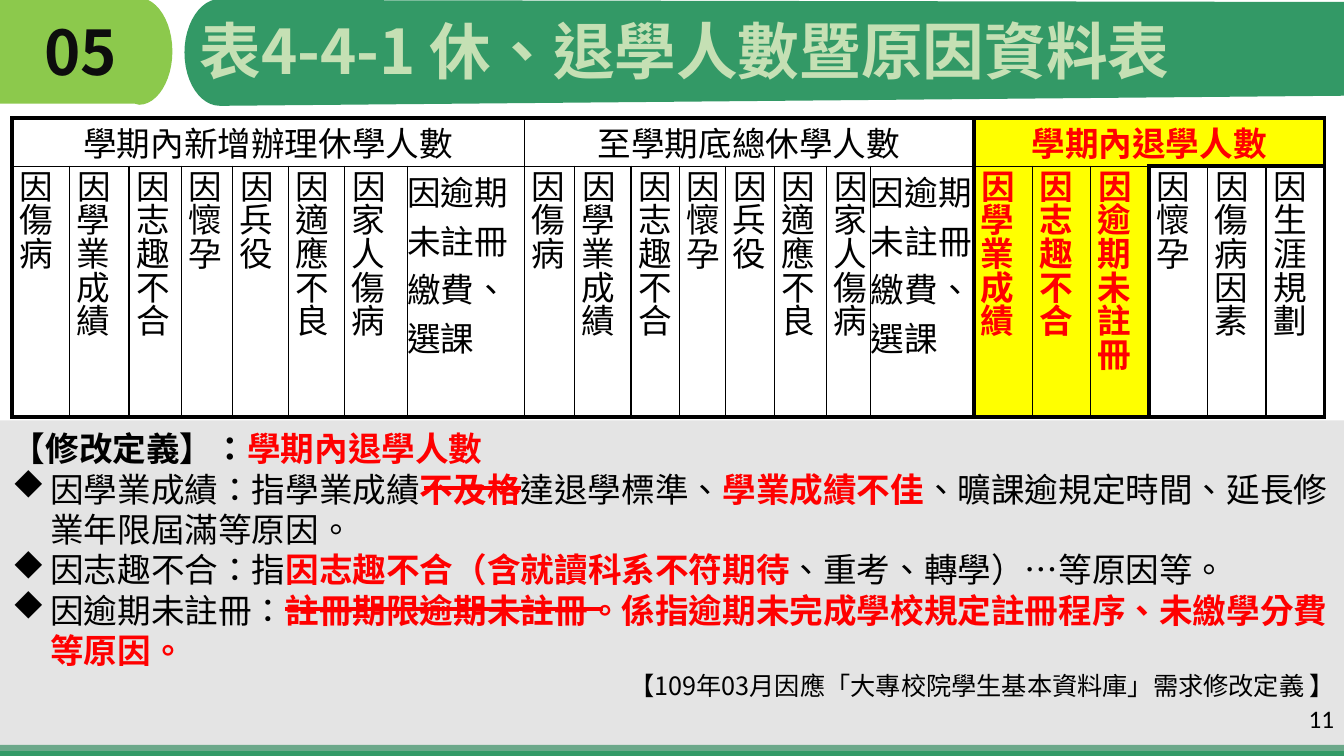
from lxml.etree import SubElement
from pptx import Presentation
from pptx.dml.color import RGBColor
from pptx.enum.shapes import MSO_CONNECTOR, MSO_SHAPE
from pptx.enum.text import MSO_ANCHOR, PP_ALIGN
from pptx.oxml.ns import qn
from pptx.util import Inches, Pt

LIME = RGBColor(0x8C, 0xC9, 0x4C)
GREEN = RGBColor(0x33, 0x99, 0x66)
PALE_GREEN = RGBColor(0xC5, 0xE0, 0xB4)
GRAY = RGBColor(0xBF, 0xBF, 0xBF)
DARK = RGBColor(0x0D, 0x0D, 0x0D)
BLACK = RGBColor(0, 0, 0)
RED = RGBColor(0xFF, 0, 0)
YELLOW = RGBColor(0xFF, 0xFF, 0)
CJK = "Noto Sans CJK SC"

COLUMN_WIDTHS = [0.57, 0.59, 0.52, 0.51, 0.55, 0.56, 0.62, 1.16,
                 0.5, 0.56, 0.48, 0.46, 0.48, 0.52, 0.44, 1.02] + [0.58] * 6
GROUPS = [("學期內新增辦理休學人數", 0, 7), ("至學期底總休學人數", 8, 15),
          ("學期內退學人數", 16, 21)]
OVERDUE = "因逾期未註冊\n繳費、選課"
LEAVE_REASONS = ["因傷病", "因學業成績", "因志趣不合", "因懷孕", "因兵役",
                 "因適應不良", "因家人傷病", OVERDUE]
DROPOUT_REASONS = ["因學業成績", "因志趣不合", "因逾期未註冊",
                   "因懷孕", "因傷病因素", "因生涯規劃"]
REVISED = range(16, 19)
THICK_EDGES = {0, 16, 19, 22}

# Each run is (text, is it highlighted)
DEFINITIONS = [
    [("因學業成績：指學業成績", False), ("不及格", True), ("達退學標準、", False),
     ("學業成績不佳", True), ("、曠課逾規定時間、延長修業年限屆滿等原因。", False)],
    [("因志趣不合：指", False), ("因志趣不合（含就讀科系不符期待", True),
     ("、重考、轉學）…等原因等。", False)],
    [("因逾期未註冊：", False),
     ("註冊期限逾期未註冊。係指逾期未完成學校規定註冊程序、未繳學分費等原因。", True)],
]


def add_run(p, text, size, color=BLACK, bold=False, font=CJK):
    r = p.add_run()
    r.text = text
    r.font.size, r.font.bold, r.font.name = Pt(size), bold, font
    r.font.color.rgb = color
    r.font._element.set("lang", "en-US")
    r.font._element.set("lang", "zh-TW")
    SubElement(r.font._element, qn("a:ea")).set("typeface", font)


def hang(p, length):
    p_pr = p._p.get_or_add_pPr()
    p_pr.set("marL", str(Inches(length)))
    p_pr.set("indent", str(Inches(-length)))
    return p_pr


def paint(sp, color):
    sp.shadow.inherit = False
    sp.fill.solid()
    sp.fill.fore_color.rgb = color
    sp.line.fill.background()


def add_band(slide, top, height, color, alpha=None):
    sp = slide.shapes.add_shape(MSO_SHAPE.RECTANGLE, 0, Inches(top),
                                Inches(13.33), Inches(height))
    paint(sp, color)
    if alpha:
        fill_color = sp.fill._xPr.find(qn("a:solidFill"))[0]
        SubElement(fill_color, qn("a:alpha")).set("val", str(alpha * 1000))


def bezier(a, b, c, d, steps=12):
    for i in range(steps + 1):
        t = i / steps
        u = 1 - t
        yield tuple(u**3 * m + 3 * u * u * t * n + 3 * u * t * t * o + t**3 * q
                    for m, n, o, q in zip(a, b, c, d))


def add_outline(slide, points, color):
    points = [(Inches(x), Inches(y)) for x, y in points]
    builder = slide.shapes.build_freeform(*points[0])
    builder.add_line_segments(points[1:], close=True)
    paint(builder.convert_to_shape(), color)


def add_textbox(slide, left, top, width, height):
    tf = slide.shapes.add_textbox(Inches(left), Inches(top),
                                  Inches(width), Inches(height)).text_frame
    tf.word_wrap = True
    return tf


def add_heading(slide, left, top, width, height, text, color):
    p = add_textbox(slide, left, top, width, height).paragraphs[0]
    p.line_spacing = 0.9
    add_run(p, text, 44, color, True)


def add_strike(slide, x1, x2, y):
    line = slide.shapes.add_connector(MSO_CONNECTOR.STRAIGHT, Inches(x1), Inches(y),
                                      Inches(x2), Inches(y))
    line.line.color.rgb, line.line.width = RED, Pt(3)
    SubElement(line._element.spPr, qn("a:effectLst"))


def set_borders(cell, widths):
    tc_pr = cell._tc.get_or_add_tcPr()
    for side, width in zip("LRTB", widths):
        ln = SubElement(tc_pr, qn(f"a:ln{side}"), w=str(Pt(width)))
        fill = SubElement(ln, qn("a:solidFill"))
        SubElement(fill, qn("a:srgbClr"), val=str(BLACK))


def format_cell(cell, text, first, last, top, bottom, revised, align=None):
    cell.margin_left = cell.margin_right = cell.margin_top = cell.margin_bottom = 0
    edges = [3 if edge in THICK_EDGES else 1 for edge in (first, last + 1)]
    set_borders(cell, edges + [top, bottom])
    if revised:
        cell.fill.solid()
        cell.fill.fore_color.rgb = YELLOW
    else:
        cell.fill.background()
    tf = cell.text_frame
    for i, line in enumerate(text.split("\n")):
        p = tf.add_paragraph() if i else tf.paragraphs[0]
        p.alignment = align
        add_run(p, line, 24, RED if revised else BLACK, revised)


def set_upright(cell):
    cell._tc.get_or_add_tcPr().set("vert", "eaVert")
    cell.margin_top = Inches(0.09)
    p = cell.text_frame.paragraphs[0]
    p.line_spacing = Pt(24)
    hang(p, 0.07)


def add_reason_table(slide):
    table = slide.shapes.add_table(2, len(COLUMN_WIDTHS), Inches(0.12), Inches(1.17),
                                   Inches(13.05), Inches(2.97)).table
    table.first_row = table.horz_banding = False
    for column, width in zip(table.columns, COLUMN_WIDTHS):
        column.width = Inches(width)
    table.rows[0].height, table.rows[1].height = Inches(0.48), Inches(2.49)

    # Group headings
    for text, first, last in GROUPS:
        cell = table.cell(0, first)
        cell.merge(table.cell(0, last))
        cell.vertical_anchor = MSO_ANCHOR.MIDDLE
        format_cell(cell, text, first, last, 3, 1, first in REVISED, PP_ALIGN.CENTER)
        for c in range(first + 1, last + 1):
            set_borders(table.cell(0, c), [1, 3 if c + 1 in THICK_EDGES else 1, 3, 1])

    # Reasons, upright except for the two wide columns
    for c, reason in enumerate(LEAVE_REASONS * 2 + DROPOUT_REASONS):
        cell = table.cell(1, c)
        upright = reason != OVERDUE
        format_cell(cell, " " + reason if upright else reason, c, c,
                    3 if c >= 19 else 1, 3, c in REVISED)
        if upright:
            set_upright(cell)


def add_definitions(slide):
    tf = add_textbox(slide, 0.02, 4.2, 13.32, 3.23)
    p = tf.paragraphs[0]
    add_run(p, "【修改定義】：", 24, BLACK, True)
    add_run(p, "學期內退學人數", 24, RED, True)
    for runs in DEFINITIONS:
        p = tf.add_paragraph()
        p_pr = hang(p, 0.38)
        SubElement(p_pr, qn("a:buFont"), typeface="Wingdings", charset="2")
        SubElement(p_pr, qn("a:buChar"), char="u")
        for text, marked in runs:
            add_run(p, text, 24, RED if marked else BLACK, marked)
    p = tf.add_paragraph()
    p.alignment = PP_ALIGN.RIGHT
    add_run(p, "【109年03月因應「大專校院學生基本資料庫」需求修改定義 】", 18)


def main():
    prs = Presentation()
    prs.slide_width, prs.slide_height = Inches(13.33), Inches(7.5)
    slide = prs.slides.add_slide(prs.slide_layouts[6])

    # Number tab and title banner
    tab = [*bezier((1.38, -0.02), (1.56, -0.02), (1.71, 0.22), (1.71, 0.51)),
           *bezier((1.71, 0.51), (1.71, 0.8), (1.56, 1.04), (1.38, 1.04)),
           (1.34, 1.03), (0, 1.03), (0, -0.01), (1.34, -0.01)]
    banner = [*bezier((2.18, 1.05), (1.99, 1.05), (1.83, 0.82), (1.83, 0.52)),
              *bezier((1.83, 0.52), (1.83, 0.23), (1.99, -0.01), (2.18, -0.01)),
              (2.22, 0), (13.33, 0.02), (13.33, 0.95), (2.22, 1.05)]
    add_outline(slide, tab, LIME)
    add_outline(slide, banner, GREEN)

    # Footer and definition background
    add_band(slide, 7.39, 0.12, GREEN)
    add_band(slide, 4.17, 3.28, GRAY, alpha=41)

    # Headings and page number
    add_heading(slide, 0.34, 0.17, 1.37, 1.45, "05", DARK)
    p = add_textbox(slide, 10.33, 6.93, 3, 0.4).paragraphs[0]
    p.alignment = PP_ALIGN.RIGHT
    add_run(p, "11", 18, font="Calibri")
    add_heading(slide, 1.88, 0.16, 11.45, 0.82, "表4-4-1 休、退學人數暨原因資料表", PALE_GREEN)

    # Table, definitions and struck-out wording
    add_reason_table(slide)
    add_definitions(slide)
    add_strike(slide, 4.21, 5.17, 4.84)
    add_strike(slide, 2.83, 5.98, 6.04)
    prs.save("out.pptx")


if __name__ == "__main__":
    main()
